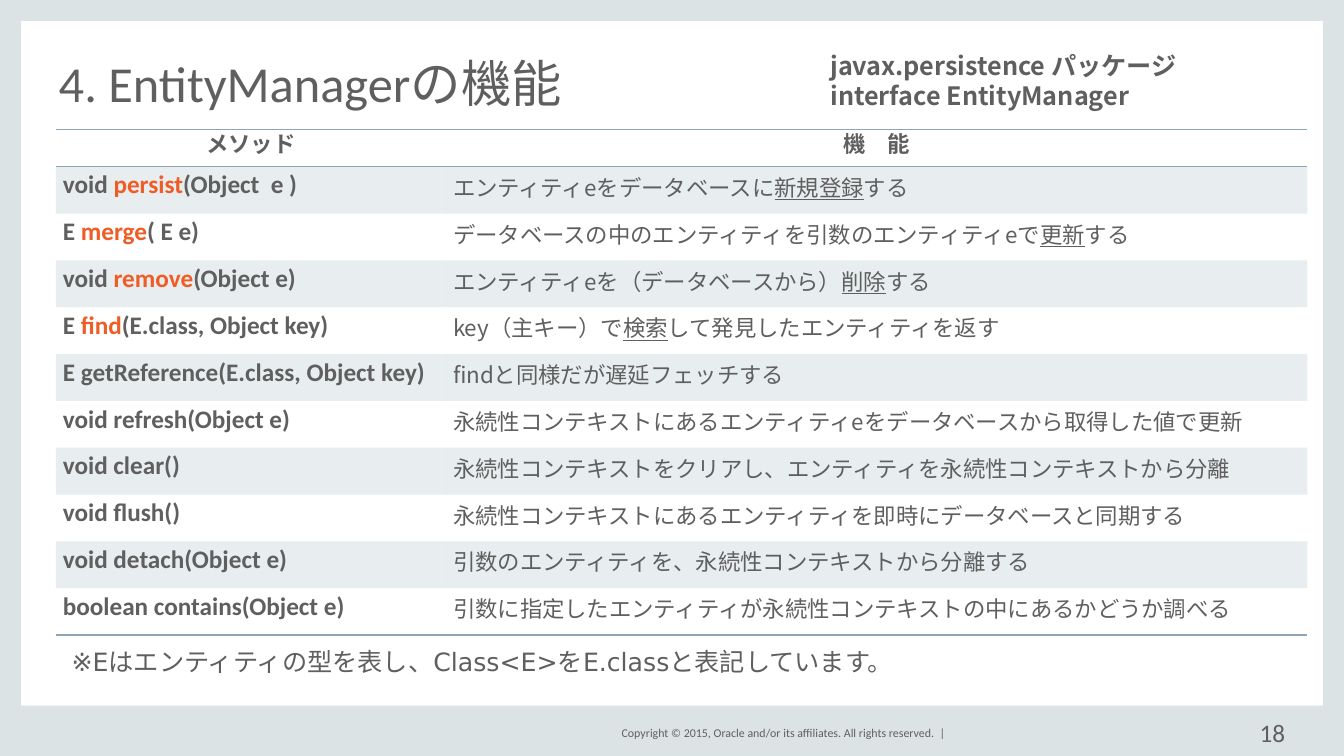
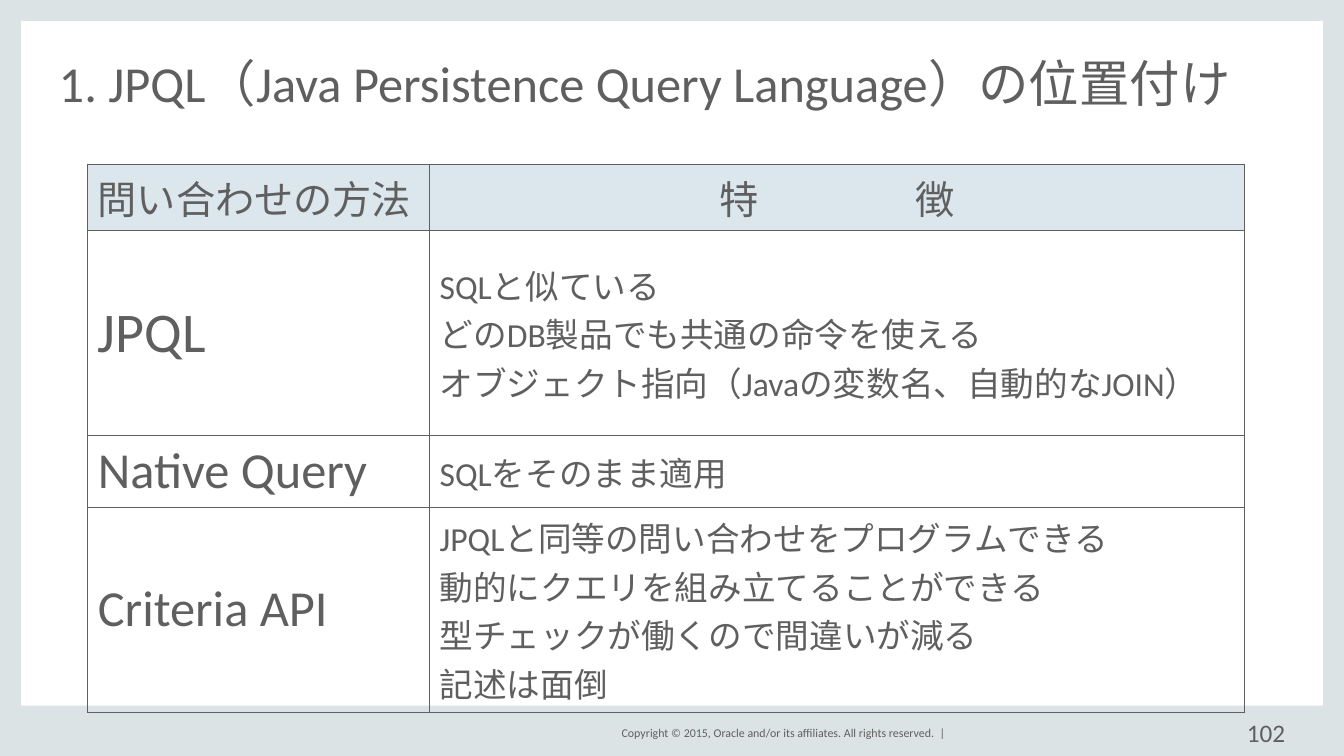
import pptx
import pptx.dml.color
import pptx.enum.shapes
import pptx.enum.text
import pptx.oxml.ns
import pptx.util
from lxml import etree

WIDTH, HEIGHT = 13.33, 7.5
COLUMNS, ROWS = 64, 36
COLORS = {"band": "DCE3E4", "text": "5F5F5F", "accent": "F05C25",
          "rule": "8DA6B1", "header": "DCE6ED"}
LATIN, JAPANESE, NOTE_FONT = "Calibri", "Noto Sans CJK JP", "DejaVu Sans"
PLAIN_TABLE_STYLE = "{2D5ABB26-0587-4C30-8999-92F81FD0307C}"
ALIGN = pptx.enum.text.PP_ALIGN
ANCHOR = pptx.enum.text.MSO_ANCHOR

METHODS = [
    ("void *persist*(Object  e )", "エンティティeをデータベースに*新規登録*する"),
    ("E *merge*( E e)", "データベースの中のエンティティを引数のエンティティeで*更新*する"),
    ("void *remove*(Object e)", "エンティティeを（データベースから）*削除*する"),
    ("E *find*(E.class, Object key)", "key（主キー）で*検索*して発見したエンティティを返す"),
    ("E getReference(E.class, Object key)", "findと同様だが遅延フェッチする"),
    ("void refresh(Object e)", "永続性コンテキストにあるエンティティeをデータベースから取得した値で更新"),
    ("void clear()", "永続性コンテキストをクリアし、エンティティを永続性コンテキストから分離"),
    ("void flush()", "永続性コンテキストにあるエンティティを即時にデータベースと同期する"),
    ("void detach(Object e)", "引数のエンティティを、永続性コンテキストから分離する"),
    ("boolean contains(Object e)", "引数に指定したエンティティが永続性コンテキストの中にあるかどうか調べる"),
]
QUERIES = [
    ("JPQL", 40, ["SQLと似ている", "どのDB製品でも共通の命令を使える",
                  "オブジェクト指向（Javaの変数名、自動的なJOIN）"]),
    ("Native Query", 36, ["SQLをそのまま適用"]),
    ("Criteria API", 36, ["JPQLと同等の問い合わせをプログラムできる",
                          "動的にクエリを組み立てることができる",
                          "型チェックが働くので間違いが減る", "記述は面倒"]),
]


def across(columns):
    return pptx.util.Inches(WIDTH * columns / COLUMNS)


def down(rows):
    return pptx.util.Inches(HEIGHT * rows / ROWS)


def area(left, top, width, height):
    return across(left), down(top), across(width), down(height)


def rgb(name):
    return pptx.dml.color.RGBColor.from_string(COLORS[name])


def add_element(parent, tag, **attributes):
    return etree.SubElement(parent, pptx.oxml.ns.qn(tag), attributes)


def write(frame, lines, size, font=LATIN, bold=False, align=ALIGN.LEFT,
          spacing=None, mark_color="text", mark_underline=False):
    """Fill a text frame; the parts between asterisks take the mark format."""
    for index, line in enumerate(lines):
        paragraph = frame.add_paragraph() if index else frame.paragraphs[0]
        paragraph.alignment = align
        paragraph.line_spacing = spacing
        for position, part in enumerate(line.split("*")):
            marked = position % 2 == 1
            run = paragraph.add_run()
            run.text = part
            run.font.size = pptx.util.Pt(size)
            run.font.bold = bold
            if marked and mark_underline:
                run.font.underline = True
            run.font.color.rgb = rgb(mark_color if marked else "text")
            run.font.name = font
            add_element(run.font._element, "a:ea", typeface=JAPANESE)


def add_text(slide, place, lines, size, anchor=ANCHOR.MIDDLE, inset=0, **style):
    frame = slide.shapes.add_textbox(*area(*place)).text_frame
    frame.word_wrap = True
    frame.vertical_anchor = anchor
    frame.margin_left = frame.margin_right = pptx.util.Inches(inset)
    frame.margin_top = frame.margin_bottom = pptx.util.Inches(inset / 2)
    write(frame, lines, size, **style)


def add_table(slide, left, top, widths, heights):
    place = area(left, top, sum(widths), sum(heights))
    table = slide.shapes.add_table(len(heights), len(widths), *place).table
    table.first_row = table.horz_banding = False
    style = table._tbl.tblPr.find(pptx.oxml.ns.qn("a:tableStyleId"))
    style.text = PLAIN_TABLE_STYLE
    for column, width in zip(table.columns, widths):
        column.width = across(width)
    for row, height in zip(table.rows, heights):
        row.height = down(height)
    for cell in table.iter_cells():
        cell.vertical_anchor = ANCHOR.MIDDLE
    return table


def rule_cell(cell, sides, color):
    """Draw 1 pt borders on sides given in the order L, R, T, B; call before filling."""
    for side in sides:
        line = add_element(cell._tc.get_or_add_tcPr(), f"a:ln{side}", w="12700")
        add_element(add_element(line, "a:solidFill"), "a:srgbClr", val=COLORS[color])


def fill_cell(cell, color, opacity=100):
    cell.fill.solid()
    cell.fill.fore_color.rgb = rgb(color)
    if opacity < 100:
        tint = cell._tc.tcPr.find(pptx.oxml.ns.qn("a:solidFill"))
        add_element(tint[0], "a:alpha", val=str(opacity * 1000))


def add_page(deck, title, number):
    """Add a blank slide with the shared border, title and footer."""
    slide = deck.slides.add_slide(deck.slide_layouts[6])
    for place in ((0, 0, 1, ROWS), (COLUMNS - 1, 0, 1, ROWS),
                  (0, 33.6, COLUMNS, 2.4), (0, 0, COLUMNS, 1)):
        band = slide.shapes.add_shape(
            pptx.enum.shapes.MSO_SHAPE.RECTANGLE, *area(*place))
        band.shadow.inherit = False
        band.fill.solid()
        band.fill.fore_color.rgb = rgb("band")
        band.line.fill.background()
    add_text(slide, (28.22, 34.42, 16.8, 0.96),
             ["Copyright © 2015, Oracle and/or its affiliates. All rights reserved.  |"],
             8.5, align=ALIGN.RIGHT)
    add_text(slide, (59.2, 34.42, 2, 0.96), [str(number)], 18, align=ALIGN.RIGHT)
    add_text(slide, (2.8, 1.97, 58.4, 3.36), [title], 36,
             anchor=ANCHOR.BOTTOM, spacing=0.8)
    return slide


def add_methods_page(deck):
    slide = add_page(deck, "4. EntityManagerの機能", 18)
    table = add_table(slide, 2.66, 6.16, (18.58, 41.02),
                      [1.78] + [2.23] * len(METHODS))
    tight, loose = pptx.util.Pt(15), pptx.util.Pt(18)
    for cell in table.iter_cells():
        cell.margin_left = cell.margin_right = pptx.util.Inches(0.07)
        cell.margin_top = cell.margin_bottom = 0
    for column, heading in enumerate(("メソッド", "機　能")):
        cell = table.cell(0, column)
        write(cell.text_frame, [heading], 16, bold=True, align=ALIGN.CENTER, spacing=tight)
        rule_cell(cell, "TB", "rule")
        rule_cell(table.cell(len(METHODS), column), "B", "rule")
    for row, (signature, purpose) in enumerate(METHODS, 1):
        write(table.cell(row, 0).text_frame, [signature], 18, bold=True,
              spacing=tight, mark_color="accent")
        write(table.cell(row, 1).text_frame, [purpose], 16, font=JAPANESE,
              spacing=loose, mark_underline=True)
        if row % 2:
            for column in range(2):
                fill_cell(table.cell(row, column), "rule", opacity=20)
    add_text(slide, (39.07, 2.11, 22.2, 3.4),
             ["javax.persistence パッケージ", "interface EntityManager"],
             18, inset=0.1, font=JAPANESE, bold=True)
    add_text(slide, (3.41, 30.96, 45.9, 1.54),
             ["※Eはエンティティの型を表し、Class<E>をE.classと表記しています。"],
             18, anchor=ANCHOR.TOP, font=NOTE_FONT, spacing=0.9)


def add_queries_page(deck):
    slide = add_page(deck, "1. JPQL（Java Persistence Query Language）の位置付け", 102)
    table = add_table(slide, 4.18, 7.82, (16.28, 38.8), (3.17, 9.76, 3.41, 9.76))
    for cell in table.iter_cells():
        rule_cell(cell, "LRTB", "text")
    headings = (("問い合わせの方法", ALIGN.LEFT), ("特　　　　徴", ALIGN.CENTER))
    for column, (heading, align) in enumerate(headings):
        write(table.cell(0, column).text_frame, [heading], 28, align=align)
        fill_cell(table.cell(0, column), "header")
    for row, (query, size, features) in enumerate(QUERIES, 1):
        write(table.cell(row, 0).text_frame, [query], size)
        write(table.cell(row, 1).text_frame, features, 24)


def main():
    deck = pptx.Presentation()
    deck.slide_width, deck.slide_height = across(COLUMNS), down(ROWS)
    add_methods_page(deck)
    add_queries_page(deck)
    deck.save("out.pptx")


if __name__ == "__main__":
    main()
